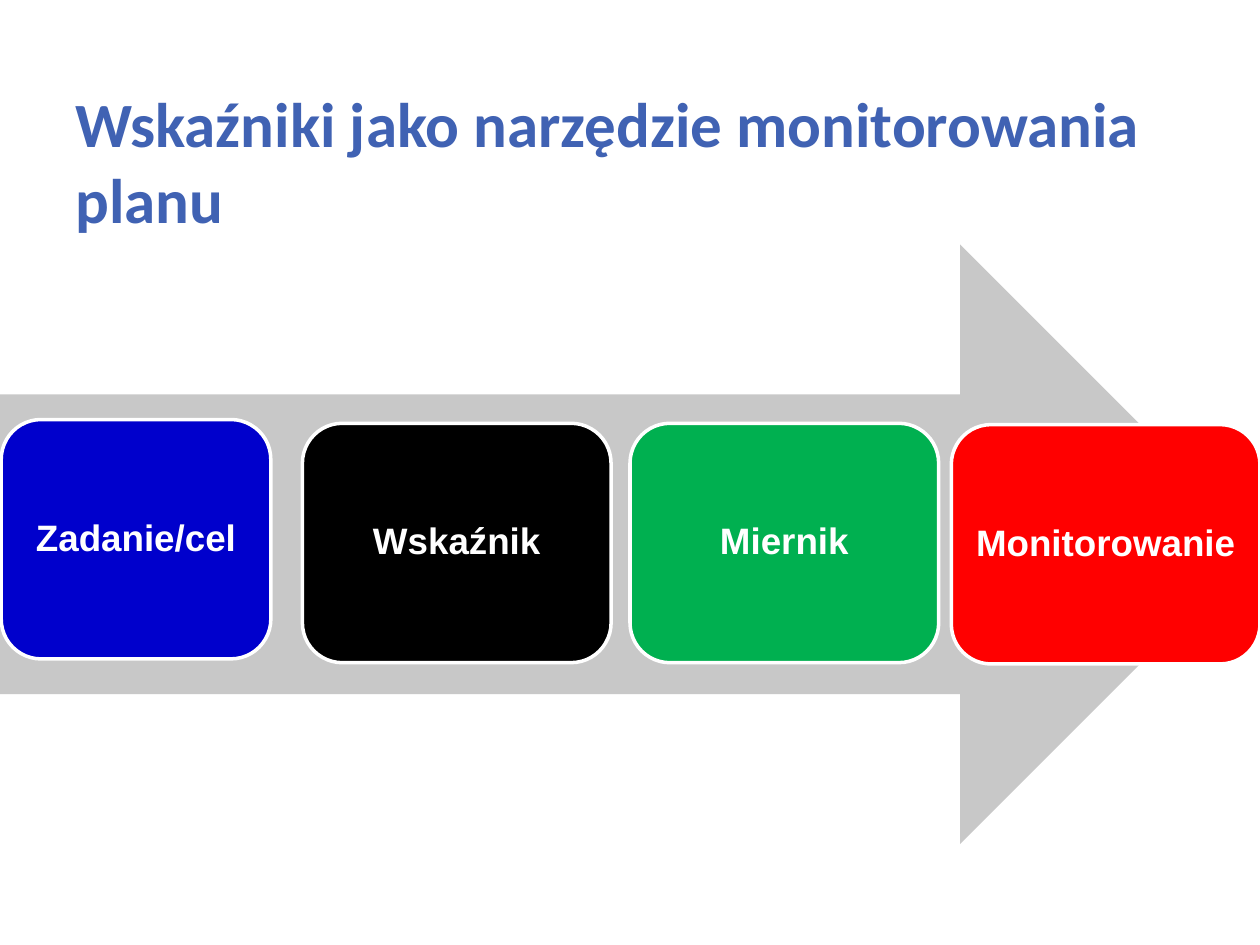
from typing import NamedTuple

from lxml import etree
from pptx import Presentation
from pptx.dml.color import RGBColor
from pptx.enum.shapes import MSO_SHAPE
from pptx.enum.text import MSO_ANCHOR, PP_ALIGN
from pptx.oxml.ns import qn
from pptx.slide import Slide
from pptx.util import Inches, Pt

RIGHT_ARROW = MSO_SHAPE.RIGHT_ARROW
ROUNDED = MSO_SHAPE.ROUNDED_RECTANGLE
TOP, MIDDLE = MSO_ANCHOR.TOP, MSO_ANCHOR.MIDDLE
CENTER = PP_ALIGN.CENTER

TITLE_BLUE = RGBColor(0x40, 0x62, 0xB3)
GRAY = RGBColor(0xA6, 0xA6, 0xA6)
WHITE = RGBColor(0xFF, 0xFF, 0xFF)
BLUE = RGBColor(0x00, 0x00, 0xCC)
BLACK = RGBColor(0x00, 0x00, 0x00)
GREEN = RGBColor(0x00, 0xB0, 0x50)
RED = RGBColor(0xFF, 0x00, 0x00)

STEP_HEIGHT = 1.9
ARROW_OPACITY = 61


class Step(NamedTuple):
    label: str
    left: float
    top: float
    width: float
    color: RGBColor


STEPS = [
    Step("Zadanie/cel", 0.01, 3.33, 2.14, BLUE),
    Step("Wskaźnik", 2.4, 3.36, 2.45, BLACK),
    Step("Miernik", 5, 3.36, 2.45, GREEN),
    Step("Monitorowanie", 7.55, 3.37, 2.45, RED),
]


def add_title(page: Slide, text: str) -> None:
    box = page.shapes.add_textbox(Inches(0.5), Inches(0.6), Inches(9), Inches(1.18))
    frame = box.text_frame
    frame.word_wrap = True
    frame.vertical_anchor = TOP
    frame.margin_top = Inches(0.07)
    para = frame.paragraphs[0]
    para.text = text
    para.font.name = "Calibri"
    para.font.size = Pt(36)
    para.font.bold = True
    para.font.color.rgb = TITLE_BLUE


def add_arrow(page: Slide) -> None:
    arrow = page.shapes.add_shape(
        RIGHT_ARROW, Inches(0), Inches(1.94), Inches(10), Inches(4.76)
    )
    arrow.shadow.inherit = False
    arrow.fill.solid()
    arrow.fill.fore_color.rgb = GRAY
    arrow.line.fill.background()
    color = arrow.fill._xPr.find(qn("a:solidFill")).find(qn("a:srgbClr"))
    etree.SubElement(color, qn("a:alpha"), val=str(ARROW_OPACITY * 1000))


def add_step(page: Slide, step: Step) -> None:
    card = page.shapes.add_shape(
        ROUNDED,
        Inches(step.left),
        Inches(step.top),
        Inches(step.width),
        Inches(STEP_HEIGHT),
    )
    card.shadow.inherit = False
    card.fill.solid()
    card.fill.fore_color.rgb = step.color
    card.line.color.rgb = WHITE
    card.line.width = Pt(2)
    frame = card.text_frame
    frame.word_wrap = True
    frame.vertical_anchor = MIDDLE
    frame.margin_left = frame.margin_right = Inches(0.05)
    para = frame.paragraphs[0]
    para.text = step.label
    para.alignment = CENTER
    para.line_spacing = 0.9
    para.font.name = "Arial"
    para.font.size = Pt(21)
    para.font.bold = True
    para.font.color.rgb = WHITE


def main() -> None:
    deck = Presentation()
    deck.slide_width = Inches(10)
    deck.slide_height = Inches(7.5)
    page = deck.slides.add_slide(deck.slide_layouts[6])
    add_title(page, "Wskaźniki jako narzędzie monitorowania planu")
    add_arrow(page)
    for step in STEPS:
        add_step(page, step)
    deck.save("out.pptx")


if __name__ == "__main__":
    main()
